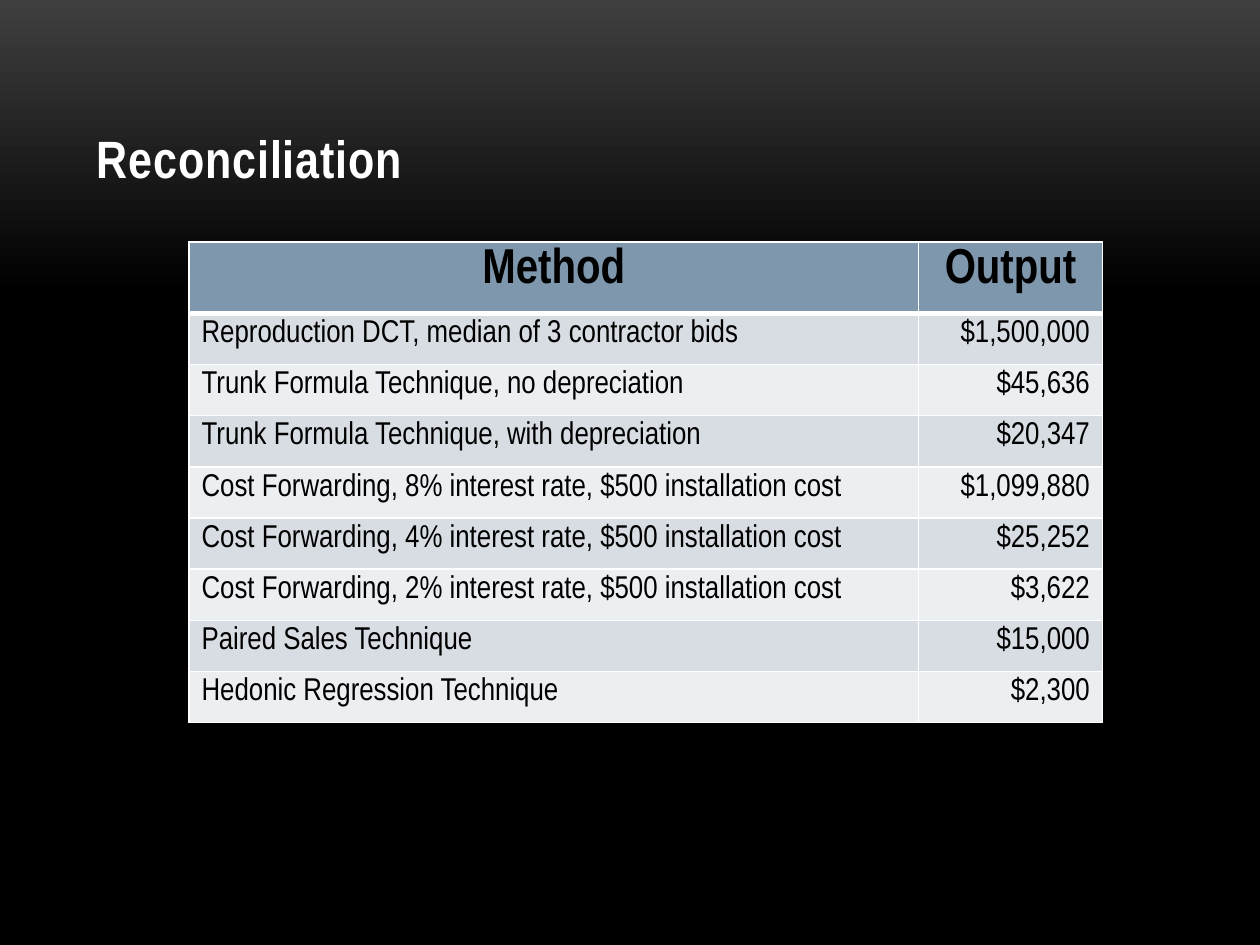
"""Build the Reconciliation slide with its table of methods and outputs."""
import pptx
import pptx.dml.color
import pptx.enum.text
import pptx.oxml
import pptx.oxml.ns
import pptx.util

Inches = pptx.util.Inches
Pt = pptx.util.Pt
ALIGN = pptx.enum.text.PP_ALIGN
FACE = "Arial Narrow"
HEX = {
    "glow": "3F3F3F",
    "black": "000000",
    "white": "FFFFFF",
    "head": "7E97AD",
    "odd": "D8DDE3",
    "even": "ECEFF1",
}
ROWS = [
    ("Method", "Output"),
    ("Reproduction DCT, median of 3 contractor bids", "$1,500,000"),
    ("Trunk Formula Technique, no depreciation", "$45,636"),
    ("Trunk Formula Technique, with depreciation", "$20,347"),
    ("Cost Forwarding, 8% interest rate, $500 installation cost", "$1,099,880"),
    ("Cost Forwarding, 4% interest rate, $500 installation cost", "$25,252"),
    ("Cost Forwarding, 2% interest rate, $500 installation cost", "$3,622"),
    ("Paired Sales Technique", "$15,000"),
    ("Hedonic Regression Technique", "$2,300"),
]
WIDTHS = (5.79, 1.46)
TALL, HEAD = 3.71, 0.46


def tint(name):
    return pptx.dml.color.RGBColor.from_string(HEX[name])


def write(frame, text, size, color, bold, align):
    frame.text = text
    para = frame.paragraphs[0]
    para.alignment = align
    font = para.runs[0].font
    font.name, font.size, font.bold = FACE, Pt(size), bold
    font.color.rgb = tint(color)


def shade(slide):
    fill = slide.background.fill
    fill.gradient()
    fill.gradient_angle = 270
    for stop, (place, name) in zip(fill.gradient_stops, ((0, "glow"), (0.31, "black"))):
        stop.position = place
        stop.color.rgb = tint(name)


def title(slide, text):
    box = slide.shapes.add_textbox(Inches(0.67), Inches(0.3), Inches(8.67), Inches(1.25))
    frame = box.text_frame
    frame.word_wrap = True
    frame.vertical_anchor = pptx.enum.text.MSO_ANCHOR.BOTTOM
    write(frame, text, 30, "white", True, ALIGN.LEFT)
    frame.paragraphs[0].runs[0].font._element.set("spc", "50")


def edge(cell, sides):
    props = cell._tc.get_or_add_tcPr()
    for spot, (side, width) in enumerate(sides.items()):
        line = pptx.oxml.parse_xml(
            f'<a:ln{side} {pptx.oxml.ns.nsdecls("a")} w="{Pt(width)}"><a:solidFill>'
            f'<a:srgbClr val="{HEX["white"]}"/></a:solidFill></a:ln{side}>'
        )
        props.insert(spot, line)


def style(cell, text, row, col):
    head = row == 0
    cell.margin_top = cell.margin_bottom = Inches(0.05)
    cell.fill.solid()
    cell.fill.fore_color.rgb = tint("head" if head else "odd" if row % 2 else "even")
    align = ALIGN.CENTER if head else (ALIGN.LEFT, ALIGN.RIGHT)[col]
    write(cell.text_frame, text, 28 if head else 18, "black", head, align)
    edge(cell, {"L": 1, "R": 1, "T": 3 if row == 1 else 1, "B": 3 if head else 1})


def table(slide):
    grid = slide.shapes.add_table(
        len(ROWS), len(WIDTHS), Inches(1.5), Inches(1.92), Inches(sum(WIDTHS)), Inches(TALL)
    ).table
    for col, width in zip(grid.columns, WIDTHS):
        col.width = Inches(width)
    for row, texts in enumerate(ROWS):
        grid.rows[row].height = Inches((TALL - HEAD) / (len(ROWS) - 1) if row else HEAD)
        for col, text in enumerate(texts):
            style(grid.cell(row, col), text, row, col)


def main():
    deck = pptx.Presentation()
    deck.slide_width, deck.slide_height = Inches(10), Inches(7.5)
    slide = deck.slides.add_slide(deck.slide_layouts[6])
    shade(slide)
    title(slide, "Reconciliation")
    table(slide)
    deck.save("out.pptx")


if __name__ == "__main__":
    main()
